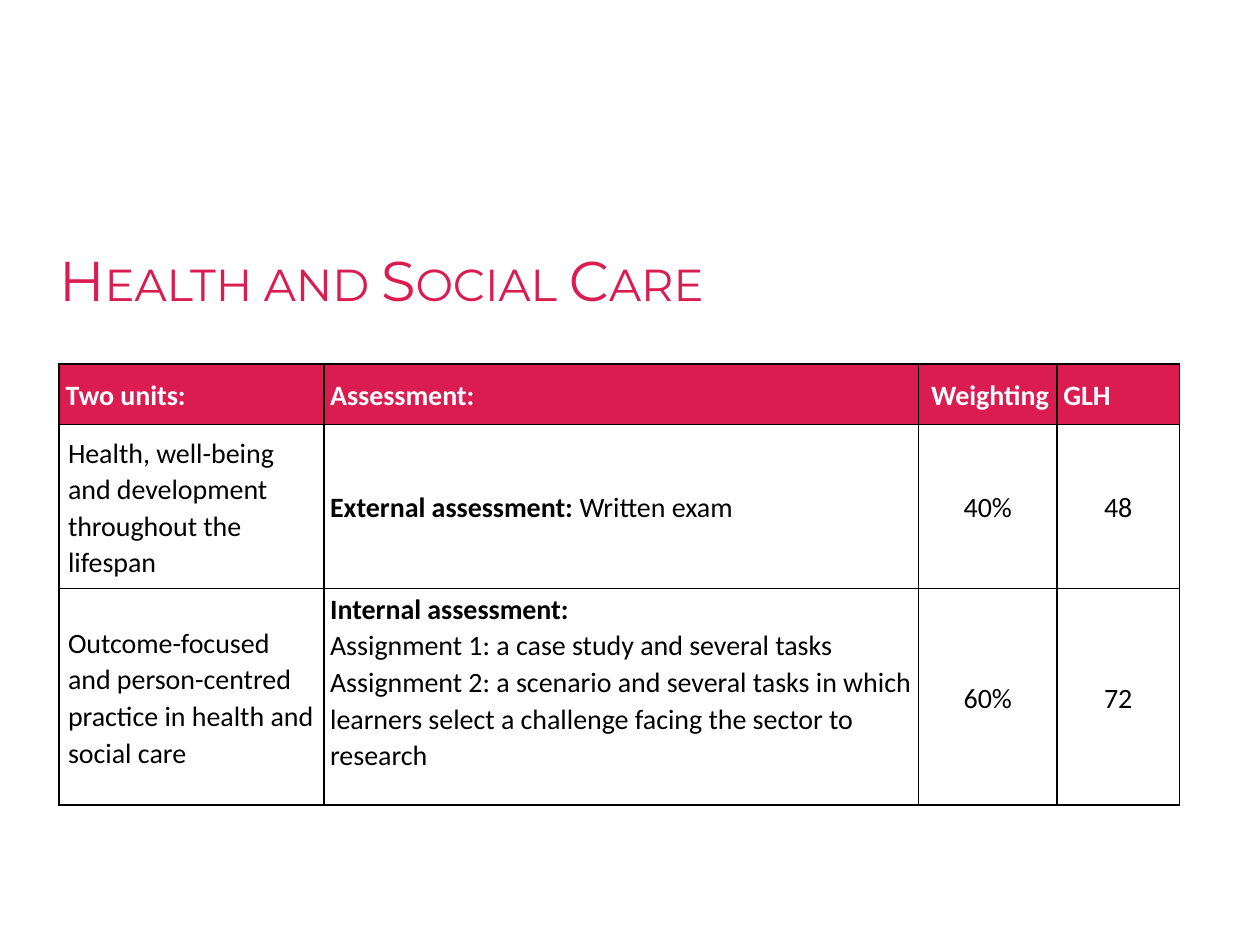
import dataclasses

import pptx
import pptx.dml.color
import pptx.enum.text
import pptx.oxml.ns
import pptx.util
from lxml import etree

Inches = pptx.util.Inches
Pt = pptx.util.Pt


@dataclasses.dataclass(frozen=True)
class Theme:
    accent: str = "DA1C51"
    ink: str = "000000"
    paper: str = "FFFFFF"
    title_font: str = "Montserrat"
    body_font: str = "Calibri"
    title_size: int = 32
    body_size: int = 16
    line_spacing: float = 1.07
    border_width: float = 1


THEME = Theme()
TITLE = "Health and Social Care"
COLUMN_WIDTHS = [2.1, 4.72, 1.1, 0.97]
ROW_HEIGHTS = [0.48, 1.3, 1.72]

# Each cell is a list of paragraphs; each paragraph is a list of (text, bold) runs
HEADINGS = ["Two units:", "Assessment:", "Weighting", "GLH"]
UNITS = [
    (
        "Health, well-being and development throughout the lifespan",
        [[("External assessment: ", True), ("Written exam", False)]],
        "40%",
        "48",
    ),
    (
        "Outcome-focused and person-centred practice in health and social care",
        [
            [("Internal assessment:", True)],
            [("Assignment 1: a case study and several tasks", False)],
            [("Assignment 2: a scenario and several tasks in which learners "
              "select a challenge facing the sector to research", False)],
        ],
        "60%",
        "72",
    ),
]


def write_text(text_frame, text, *, font=THEME.body_font, size=THEME.body_size,
               color=THEME.ink, bold=False, centered=False, small_caps=False,
               line_spacing=THEME.line_spacing):
    """Write a string, or a list of paragraphs made of (text, bold) runs."""
    paragraphs = [[(text, bold)]] if isinstance(text, str) else text
    alignment = pptx.enum.text.PP_ALIGN
    text_frame.word_wrap = True
    for index, runs in enumerate(paragraphs):
        paragraph = text_frame.add_paragraph() if index else text_frame.paragraphs[0]
        paragraph.alignment = alignment.CENTER if centered else alignment.LEFT
        paragraph.line_spacing = line_spacing
        for words, is_bold in runs:
            run = paragraph.add_run()
            run.text = words
            run.font.name = font
            run.font.size = Pt(size)
            run.font.bold = is_bold
            run.font.color.rgb = pptx.dml.color.RGBColor.from_string(color)
            if small_caps:
                run.font._element.set("cap", "small")


def set_margins(box, left, top, right, bottom):
    box.margin_left, box.margin_top = Inches(left), Inches(top)
    box.margin_right, box.margin_bottom = Inches(right), Inches(bottom)


def style_cell(cell, fill=None):
    """Draw the four borders, then the fill."""
    qn = pptx.oxml.ns.qn
    properties = cell._tc.get_or_add_tcPr()
    for side in ("lnL", "lnR", "lnT", "lnB"):
        line = etree.SubElement(properties, qn(f"a:{side}"), w=str(Pt(THEME.border_width)))
        solid = etree.SubElement(line, qn("a:solidFill"))
        etree.SubElement(solid, qn("a:srgbClr"), val=THEME.ink)
    if fill:
        cell.fill.solid()
        cell.fill.fore_color.rgb = pptx.dml.color.RGBColor.from_string(fill)
    else:
        cell.fill.background()
    cell.vertical_anchor = pptx.enum.text.MSO_ANCHOR.MIDDLE


def add_title(slide, left, top, width, height):
    shape = slide.shapes.add_textbox(Inches(left), Inches(top), Inches(width), Inches(height))
    set_margins(shape.text_frame, 0, 0, 0, 0)
    write_text(shape.text_frame, TITLE, font=THEME.title_font, size=THEME.title_size,
               color=THEME.accent, small_caps=True, line_spacing=1)


def add_units_table(slide, left, top, width, height):
    shape = slide.shapes.add_table(len(ROW_HEIGHTS), len(COLUMN_WIDTHS), Inches(left),
                                   Inches(top), Inches(width), Inches(height))
    table = shape.table
    table.horz_banding = False
    for column, column_width in zip(table.columns, COLUMN_WIDTHS):
        column.width = Inches(column_width)
    for row, row_height in zip(table.rows, ROW_HEIGHTS):
        row.height = Inches(row_height)

    # Heading row
    for column_index, heading in enumerate(HEADINGS):
        cell = table.cell(0, column_index)
        set_margins(cell, 0.1 if heading == "Weighting" else 0.05, 0.01, 0.05, 0)
        style_cell(cell, THEME.accent)
        write_text(cell.text_frame, heading, color=THEME.paper, bold=True)

    # Unit rows
    for row_index, unit in enumerate(UNITS, start=1):
        for column_index, text in enumerate(unit):
            cell = table.cell(row_index, column_index)
            side = 0.07 if column_index == 0 else 0.05
            # The several-paragraph cell sits high, with room left below it
            bottom = 0.25 if isinstance(text, list) and len(text) > 1 else 0
            set_margins(cell, side, 0.01, side, bottom)
            style_cell(cell)
            write_text(cell.text_frame, text, centered=column_index > 1)


def main():
    presentation = pptx.Presentation()
    presentation.slide_width, presentation.slide_height = Inches(10), Inches(7.5)
    slide = presentation.slides.add_slide(presentation.slide_layouts[6])
    add_title(slide, 0.47, 1.95, 9.27, 0.6)
    add_units_table(slide, 0.47, 2.89, sum(COLUMN_WIDTHS), sum(ROW_HEIGHTS))
    presentation.save("out.pptx")


if __name__ == "__main__":
    main()
